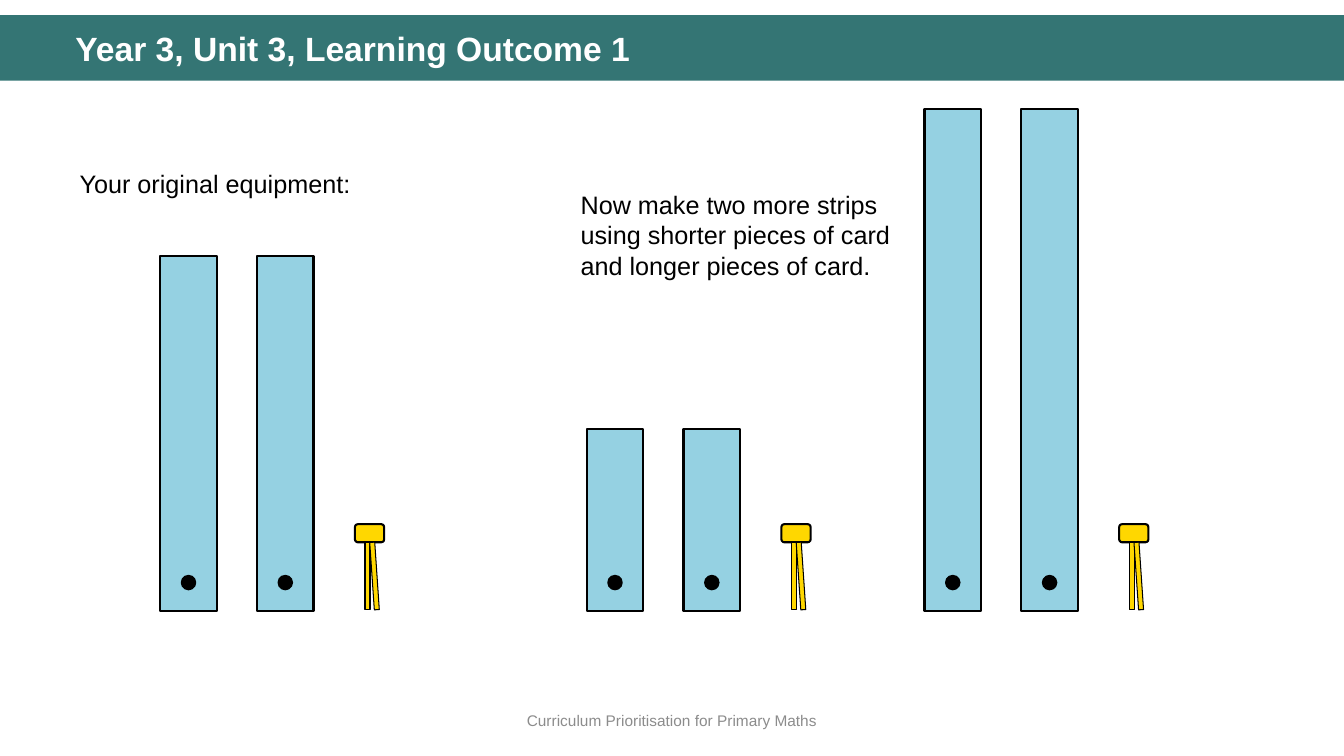
import pptx
import pptx.util
import pptx.dml.color
import pptx.enum.shapes
import pptx.enum.text

RGB = pptx.dml.color.RGBColor
TEAL = RGB(0x34, 0x75, 0x74)
BLUE = RGB(0x95, 0xD1, 0xE2)
GOLD = RGB(0xFF, 0xD7, 0x00)
GREY = RGB(0x8C, 0x8C, 0x8C)
BLACK = RGB(0, 0, 0)
WHITE = RGB(0xFF, 0xFF, 0xFF)

KIND = pptx.enum.shapes.MSO_SHAPE
ALIGN = pptx.enum.text.PP_ALIGN
ANCHOR = pptx.enum.text.MSO_ANCHOR

# The slide is a grid of one-inch columns and rows.
COLS, ROWS = 13.33, 7.5
CELL = pptx.util.Inches(1)

BASE = 6.06        # row on which all strips stand
STRIP = 0.56       # width of a strip
STEP = 0.96        # from one strip to the next
DOT = 0.14


def scale(*cells):
    return [round(n * CELL) for n in cells]


def add_part(shapes, kind, box, fill, line=None, turn=0):
    part = shapes.add_shape(kind, *scale(*box))
    part.shadow.inherit = False
    part.fill.solid()
    part.fill.fore_color.rgb = fill
    if line:
        part.line.color.rgb = BLACK
        part.line.width = pptx.util.Pt(line)
    else:
        part.line.fill.background()
    part.rotation = turn
    return part


def add_text(slide, text, box, size=18, color=BLACK, bold=False,
             align=ALIGN.LEFT, anchor=ANCHOR.TOP, space=None):
    frame = slide.shapes.add_textbox(*scale(*box)).text_frame
    frame.word_wrap = True
    frame.vertical_anchor = anchor
    para = frame.paragraphs[0]
    para.alignment = align
    para.line_spacing = space
    run = para.add_run()
    run.text = text
    run.font.name = "Arial"
    run.font.size = pptx.util.Pt(size)
    run.font.bold = bold
    run.font.color.rgb = color


def add_strip(shapes, left, tall):
    """Draw a card strip with a hole near its foot."""
    add_part(shapes, KIND.RECTANGLE, (left, BASE - tall, STRIP, tall), BLUE, 1.5)
    add_part(shapes, KIND.OVAL,
             (left + (STRIP - DOT) / 2, BASE - 0.35, DOT, DOT), BLACK, 1)


def add_pin(shapes, left):
    """Draw a split pin: a head and two legs."""
    top, head, leg = BASE - 0.86, 0.18, 0.67
    add_part(shapes, KIND.ROUNDED_RECTANGLE, (left, top, 0.29, head), GOLD, 1.5)
    for shift, turn in ((0.1, 0), (0.17, 356.1)):
        add_part(shapes, KIND.RECTANGLE,
                 (left + shift, top + head, 0.05, leg), GOLD, 0.75, turn)


def add_set(slide, left, tall):
    """Group a pin with two strips of one length."""
    shapes = slide.shapes.add_group_shape().shapes
    add_pin(shapes, left + 2 * STEP + 0.01)
    for i in range(2):
        add_strip(shapes, left + i * STEP, tall)


def add_head(slide, top, high):
    add_part(slide.shapes, KIND.RECTANGLE, (0, top, COLS, high), TEAL)
    add_text(slide, "Year 3, Unit 3, Learning Outcome 1",
             (0.65, top + 0.12, COLS - 1, 0.47),
             size=24, color=WHITE, bold=True, space=0.9)


def add_foot(slide, top, high):
    add_text(slide, "Curriculum Prioritisation for Primary Maths",
             (0, top, COLS, high), size=11, color=GREY,
             align=ALIGN.CENTER, anchor=ANCHOR.MIDDLE)


def main():
    deck = pptx.Presentation()
    deck.slide_width, deck.slide_height = scale(COLS, ROWS)
    slide = deck.slides.add_slide(deck.slide_layouts[6])
    add_head(slide, 0.15, 0.65)
    add_foot(slide, 6.95, 0.4)
    for left, tall in ((1.59, 3.52), (5.82, 1.8), (9.17, 4.98)):
        add_set(slide, left, tall)
    add_text(slide, "Your original equipment:", (0.69, 1.62, 3.08, 0.4))
    add_text(slide, "Now make two more strips using shorter pieces of card "
             "and longer pieces of card.", (5.66, 1.83, 3.38, 1.01))
    deck.save("out.pptx")


if __name__ == "__main__":
    main()
